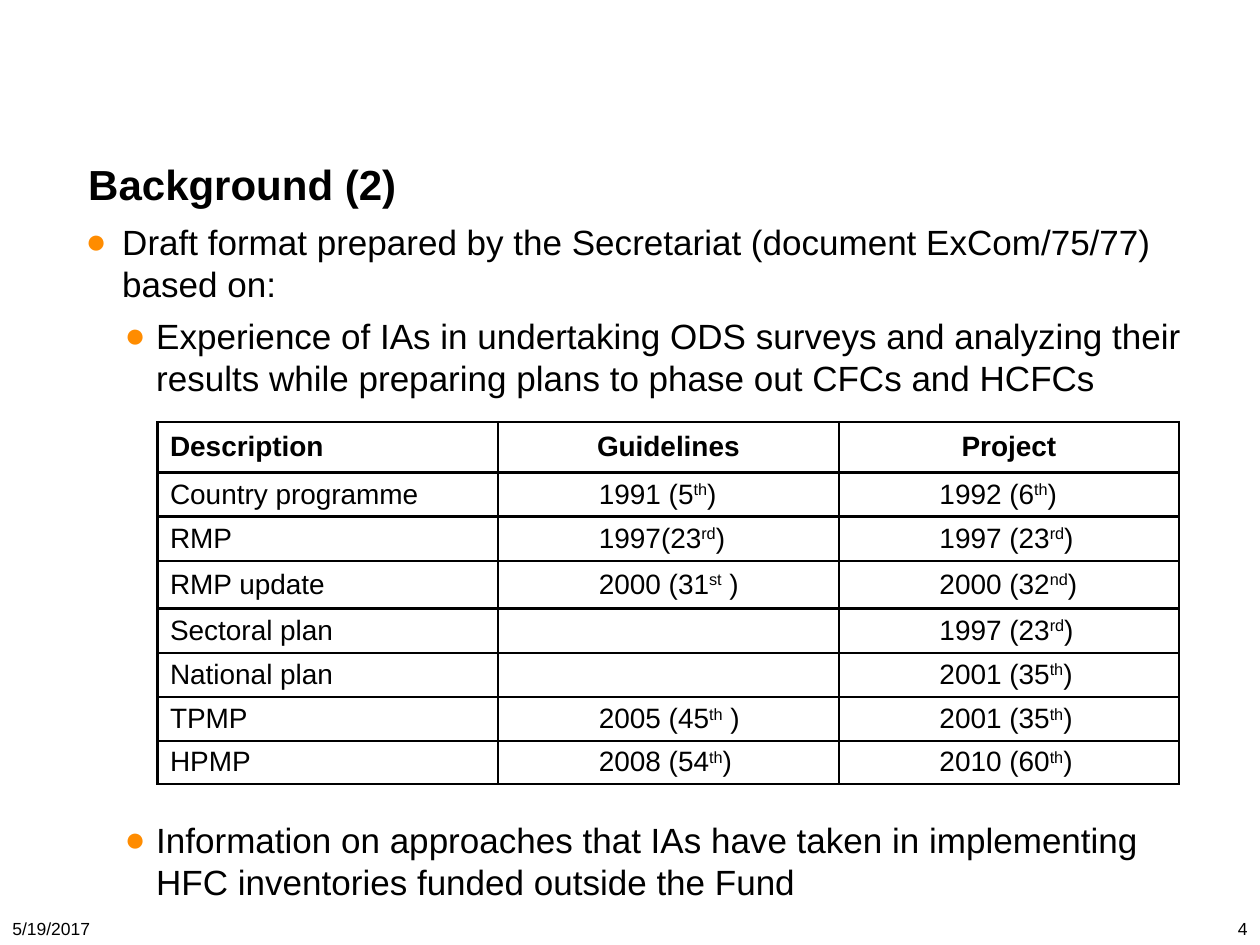
from dataclasses import dataclass

from lxml.etree import SubElement
from pptx import Presentation
from pptx.dml.color import RGBColor
from pptx.enum.text import MSO_ANCHOR as Anchor, PP_ALIGN as Align
from pptx.oxml.ns import qn
from pptx.slide import Slide
from pptx.util import Inches, Pt

BLACK = RGBColor(0x00, 0x00, 0x00)
ORANGE = RGBColor(0xFF, 0x8C, 0x00)

HEADINGS = ["Description", "Guidelines", "Project"]
# Each date is the text before the ordinal suffix, the suffix, and the text after it.
PLANS = [
    ("Country programme", ("1991 (5", "th", ")"), ("1992 (6", "th", ")")),
    ("RMP", ("1997(23", "rd", ")"), ("1997 (23", "rd", ")")),
    ("RMP update", ("2000 (31", "st", " )"), ("2000 (32", "nd", ")")),
    ("Sectoral plan", None, ("1997 (23", "rd", ")")),
    ("National plan", None, ("2001 (35", "th", ")")),
    ("TPMP", ("2005 (45", "th", " )"), ("2001 (35", "th", ")")),
    ("HPMP", ("2008 (54", "th", ")"), ("2010 (60", "th", ")")),
]
ROW_HEIGHTS = [0.4, 0.35, 0.35, 0.38, 0.35, 0.35, 0.35, 0.34]

# Text, left indent, hanging indent, points before, points after
POINTS = [
    ("Draft format prepared by the Secretariat (document ExCom/75/77) based on:",
     0.29, 0.29, 0, 6),
    ("Experience of IAs in undertaking ODS surveys and analyzing their results "
     "while preparing plans to phase out CFCs and HCFCs", 0.56, 0.25, 0, 0),
    ("Information on approaches that IAs have taken in implementing HFC "
     "inventories funded outside the Fund", 0.56, 0.25, 240, 0),
]


@dataclass
class SlideWriter:
    slide: Slide
    font: str = "Arial"
    color: RGBColor = BLACK
    border: float = 1.5

    def style(self, paragraph, size, bold=False):
        for run in paragraph.runs:
            run.font.name = self.font
            run.font.size = Pt(size)
            run.font.bold = bold
            run.font.color.rgb = self.color

    def frame(self, holder, anchor, side=0.1):
        text_frame = holder.text_frame
        text_frame.word_wrap = True
        text_frame.vertical_anchor = anchor
        text_frame.margin_left = text_frame.margin_right = Inches(side)
        text_frame.margin_top = text_frame.margin_bottom = Inches(0.05)
        return text_frame

    def title(self, text, left, top, width, height):
        title = self.slide.shapes.title
        title.left, title.top = Inches(left), Inches(top)
        title.width, title.height = Inches(width), Inches(height)
        heading = self.frame(title, Anchor.MIDDLE, 0.09)
        heading.text = text
        heading.paragraphs[0].alignment = Align.LEFT
        self.style(heading.paragraphs[0], 24, bold=True)

    def text_box(self, left, top, width, height):
        return self.slide.shapes.add_textbox(
            Inches(left), Inches(top), Inches(width), Inches(height))

    def footer(self, text, left, width, align):
        footer = self.frame(self.text_box(left, 7, width, 0.5), Anchor.BOTTOM)
        footer.text = text
        footer.paragraphs[0].alignment = align
        self.style(footer.paragraphs[0], 10)

    def bullets(self, points, left, top, width, height):
        body = self.frame(self.text_box(left, top, width, height), Anchor.TOP, 0.09)
        for index, (text, indent, hanging, before, after) in enumerate(points):
            point = body.add_paragraph() if index else body.paragraphs[0]
            point.text = text
            point.space_before, point.space_after = Pt(before), Pt(after)
            props = point._p.get_or_add_pPr()
            props.set("marL", str(Inches(indent)))
            props.set("indent", str(-Inches(hanging)))
            SubElement(SubElement(props, qn("a:buClr")), qn("a:srgbClr"), val=str(ORANGE))
            SubElement(props, qn("a:buFont"), typeface=self.font)
            SubElement(props, qn("a:buChar"), char="●")
            self.style(point, 20)

    def cell(self, cell, parts, bold=False, align=Align.LEFT, left=0.1):
        """Fill a cell with text parts, the second of which is superscript."""
        cell.fill.background()
        cell.vertical_anchor = Anchor.MIDDLE
        cell.margin_left = Inches(left)
        cell.margin_right = Inches(0 if align == Align.CENTER else 0.1)
        cell.margin_top = cell.margin_bottom = Inches(0.03 if parts else 0)
        paragraph = cell.text_frame.paragraphs[0]
        paragraph.alignment = align
        for index, part in enumerate(parts):
            run = paragraph.add_run()
            run.text = part
            if index == 1:
                run._r.get_or_add_rPr().set("baseline", "30000")
        self.style(paragraph, 16, bold)
        self.outline(cell)

    def outline(self, cell):
        props = cell._tc.get_or_add_tcPr()
        for position, side in enumerate(("a:lnL", "a:lnR", "a:lnT", "a:lnB")):
            line = props.makeelement(qn(side), {"w": str(Pt(self.border))})
            fill = SubElement(line, qn("a:solidFill"))
            SubElement(fill, qn("a:srgbClr"), val=str(self.color))
            props.insert(position, line)

    def table(self, headings, rows, heights, left, top, width):
        table = self.slide.shapes.add_table(
            len(heights), len(headings), Inches(left), Inches(top),
            Inches(width), Inches(sum(heights))).table
        table.horz_banding = False
        for row, height in zip(table.rows, heights):
            row.height = Inches(height)
        for column, heading in enumerate(headings):
            centred = column > 0
            self.cell(table.cell(0, column), [heading], bold=True,
                      align=Align.CENTER if centred else Align.LEFT,
                      left=0 if centred else 0.1)
        for row, (description, *dates) in enumerate(rows, 1):
            self.cell(table.cell(row, 0), [description])
            for column, date in enumerate(dates, 1):
                self.cell(table.cell(row, column), date or [], left=0.8)


def main():
    deck = Presentation()
    deck.slide_width, deck.slide_height = Inches(10), Inches(7.5)
    title_only = deck.slide_layouts[5]
    writer = SlideWriter(deck.slides.add_slide(title_only))
    writer.title("Background (2)", 0.61, 1.22, 8.82, 0.47)
    writer.bullets(POINTS, 0.59, 1.7, 9.06, 5.43)
    writer.footer("5/19/2017", 0, 2.08, Align.LEFT)
    writer.footer("4", 9.17, 0.83, Align.RIGHT)
    writer.table(HEADINGS, PLANS, ROW_HEIGHTS, 1.25, 3.35, 8.11)
    deck.save("out.pptx")


if __name__ == "__main__":
    main()
